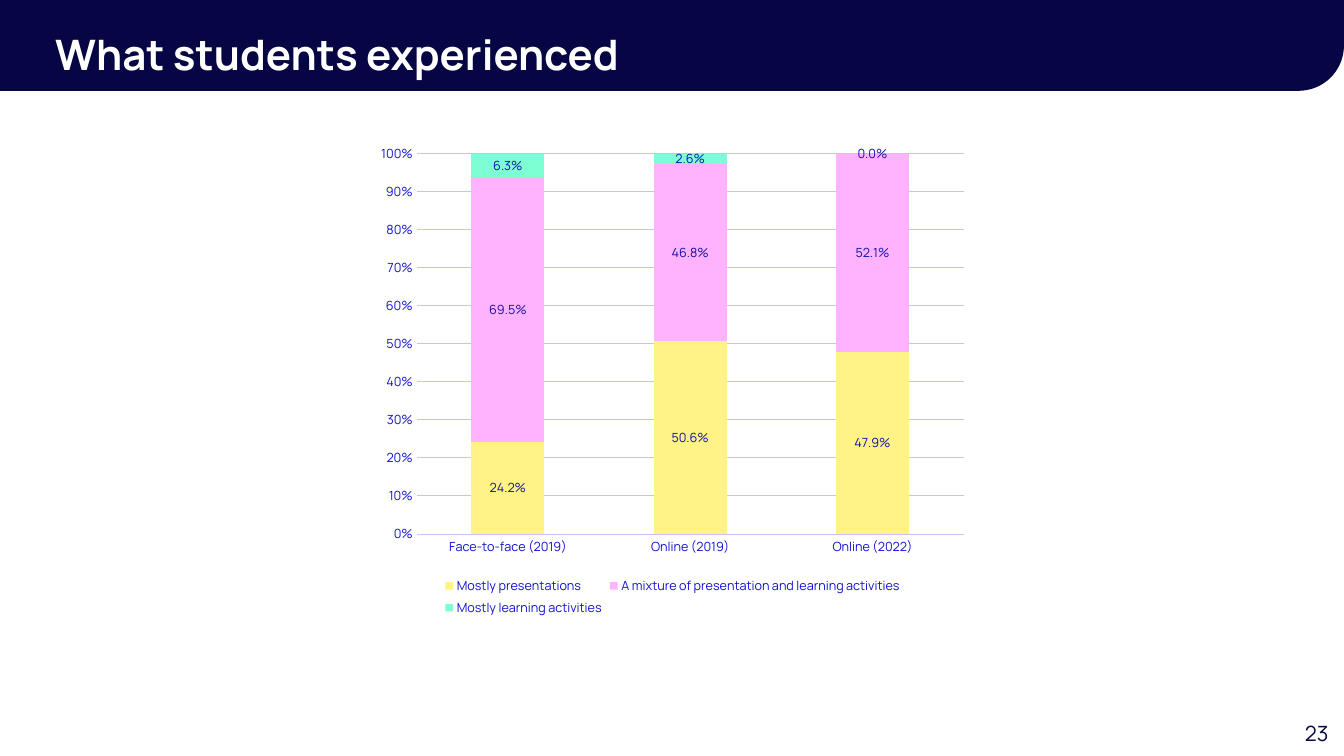
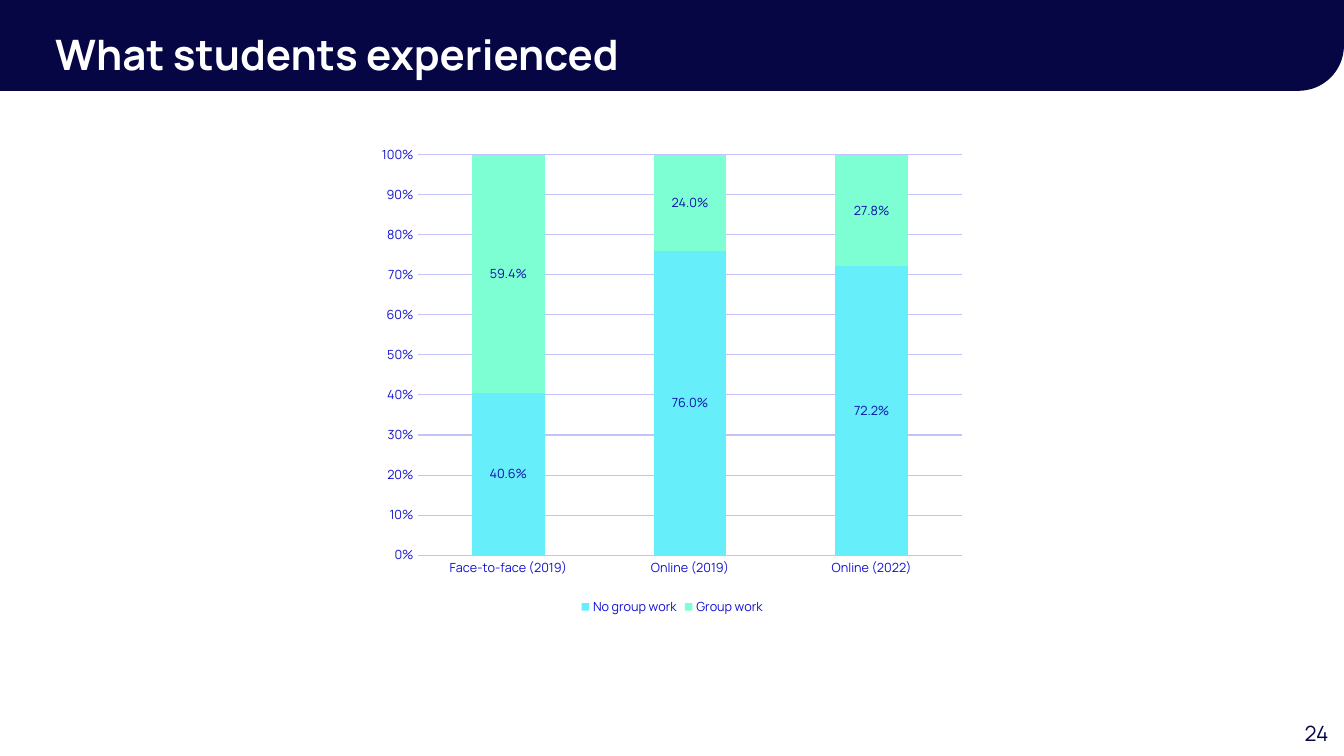
from dataclasses import dataclass

from pptx import Presentation
from pptx.chart.data import CategoryChartData
from pptx.dml.color import RGBColor
from pptx.enum.chart import (XL_CHART_TYPE, XL_LABEL_POSITION,
                             XL_LEGEND_POSITION, XL_TICK_MARK)
from pptx.enum.shapes import MSO_SHAPE
from pptx.enum.text import PP_ALIGN
from pptx.oxml.ns import qn
from pptx.util import Cm, Pt

STACKED_100 = XL_CHART_TYPE.COLUMN_STACKED_100
LABEL_CENTER = XL_LABEL_POSITION.CENTER
LEGEND_BOTTOM = XL_LEGEND_POSITION.BOTTOM
NO_TICK = XL_TICK_MARK.NONE
ROUND_ONE_CORNER = MSO_SHAPE.ROUND_1_RECTANGLE
LEFT, RIGHT = PP_ALIGN.LEFT, PP_ALIGN.RIGHT

FONT = "Manrope"
COLORS = {
    "navy": "060645",
    "white": "FFFFFF",
    "axis": "1212D1",
    "label": "0F0FA9",
    "grid": "C3C3FA",
    "yellow": "FFF388",
    "pink": "FFB3FF",
    "mint": "7DFFD3",
    "cyan": "66EEFA",
}
SLIDE_W, SLIDE_H = 33.87, 19.05
TITLE = "What students experienced"
CATEGORIES = ("Face-to-face (2019)", "Online (2019)", "Online (2022)")
FIRST_NUMBER = 23


@dataclass(frozen=True)
class Box:
    """Place and size in centimetres."""
    left: float
    top: float
    width: float
    height: float

    def lengths(self) -> tuple:
        return Cm(self.left), Cm(self.top), Cm(self.width), Cm(self.height)


@dataclass(frozen=True)
class Series:
    name: str
    values: tuple
    color: str


@dataclass(frozen=True)
class ChartSlide:
    box: Box
    series: tuple


BAND_BOX = Box(0, 0, SLIDE_W, 2.29)
TITLE_BOX = Box(1.14, 0.46, 29.9, 1.37)
NUMBER_BOX = Box(31.98, 18.03, 1.75, 0.89)

SLIDES = (
    ChartSlide(Box(9.3, 3.4, 15.29, 12.24), (
        Series("Mostly presentations", (0.242, 0.506, 0.479), "yellow"),
        Series("A mixture of presentation and learning activities",
               (0.695, 0.468, 0.521), "pink"),
        Series("Mostly learning activities", (0.063, 0.026, 0), "mint"),
    )),
    ChartSlide(Box(9.32, 3.43, 15.24, 12.19), (
        Series("No group work", (0.406, 0.76, 0.722), "cyan"),
        Series("Group work", (0.594, 0.24, 0.278), "mint"),
    )),
)


def rgb(name: str) -> RGBColor:
    return RGBColor.from_string(COLORS[name])


def style_font(font, size: float, color: str, bold: bool = False) -> None:
    font.name = FONT
    font.size = Pt(size)
    font.bold = bold
    font.color.rgb = rgb(color)


def style_line(line) -> None:
    line.color.rgb = rgb("grid")
    line.width = Pt(0.75)


def add_text(slide, box: Box, text: str, size: float, color: str,
             bold: bool = False, align=LEFT, spacing: float = 1.0) -> None:
    tf = slide.shapes.add_textbox(*box.lengths()).text_frame
    tf.word_wrap = True
    p = tf.paragraphs[0]
    p.alignment = align
    p.line_spacing = spacing
    r = p.add_run()
    r.text = text
    style_font(r.font, size, color, bold)


def add_frame(slide, number: int) -> None:
    """Draw the title band, title and slide number."""
    sp = slide.shapes.add_shape(ROUND_ONE_CORNER, *BAND_BOX.lengths())
    sp.adjustments[0] = 0.5
    sp.shadow.inherit = False
    sp.fill.solid()
    sp.fill.fore_color.rgb = rgb("navy")
    sp.line.fill.background()
    sp._element.spPr.find(qn("a:xfrm")).set("flipV", "1")
    add_text(slide, TITLE_BOX, TITLE, 30, "white", bold=True, spacing=1.1)
    add_text(slide, NUMBER_BOX, str(number), 15, "navy", align=RIGHT)


def style_axes(chart) -> None:
    for axis in (chart.category_axis, chart.value_axis):
        axis.major_tick_mark = axis.minor_tick_mark = NO_TICK
        style_font(axis.tick_labels.font, 9, "axis")
    style_line(chart.category_axis.format.line)

    values = chart.value_axis
    values.minimum_scale, values.maximum_scale = 0, 1
    values.major_unit = 0.1
    values.tick_labels.number_format = "0%"
    values.tick_labels.number_format_is_linked = False
    values.format.line.fill.background()
    values.has_major_gridlines = True
    style_line(values.major_gridlines.format.line)


def style_series(series, color: str) -> None:
    series.format.fill.solid()
    series.format.fill.fore_color.rgb = rgb(color)
    series.invert_if_negative = False
    labels = series.data_labels
    labels.show_value = True
    labels.position = LABEL_CENTER
    labels.number_format = "0.0%"
    labels.number_format_is_linked = False
    style_font(labels.font, 9, "label")


def add_stacked_chart(slide, spec_: ChartSlide) -> None:
    data = CategoryChartData(number_format="0.0%")
    data.categories = CATEGORIES
    for item in spec_.series:
        data.add_series(item.name, item.values)
    chart = slide.shapes.add_chart(STACKED_100, *spec_.box.lengths(), data).chart
    chart.has_title = False
    style_font(chart.font, 10, "navy")
    style_axes(chart)

    plot = chart.plots[0]
    plot.vary_by_categories = False
    plot.gap_width = 150
    plot.overlap = 100
    for series, item in zip(plot.series, spec_.series):
        style_series(series, item.color)

    chart.has_legend = True
    chart.legend.position = LEGEND_BOTTOM
    chart.legend.include_in_layout = False
    style_font(chart.legend.font, 9, "axis")


def main() -> None:
    prs = Presentation()
    prs.slide_width, prs.slide_height = Cm(SLIDE_W), Cm(SLIDE_H)
    blank = prs.slide_layouts[6]
    for number, content in enumerate(SLIDES, FIRST_NUMBER):
        slide = prs.slides.add_slide(blank)
        add_frame(slide, number)
        add_stacked_chart(slide, content)
    prs.save("out.pptx")


if __name__ == "__main__":
    main()
